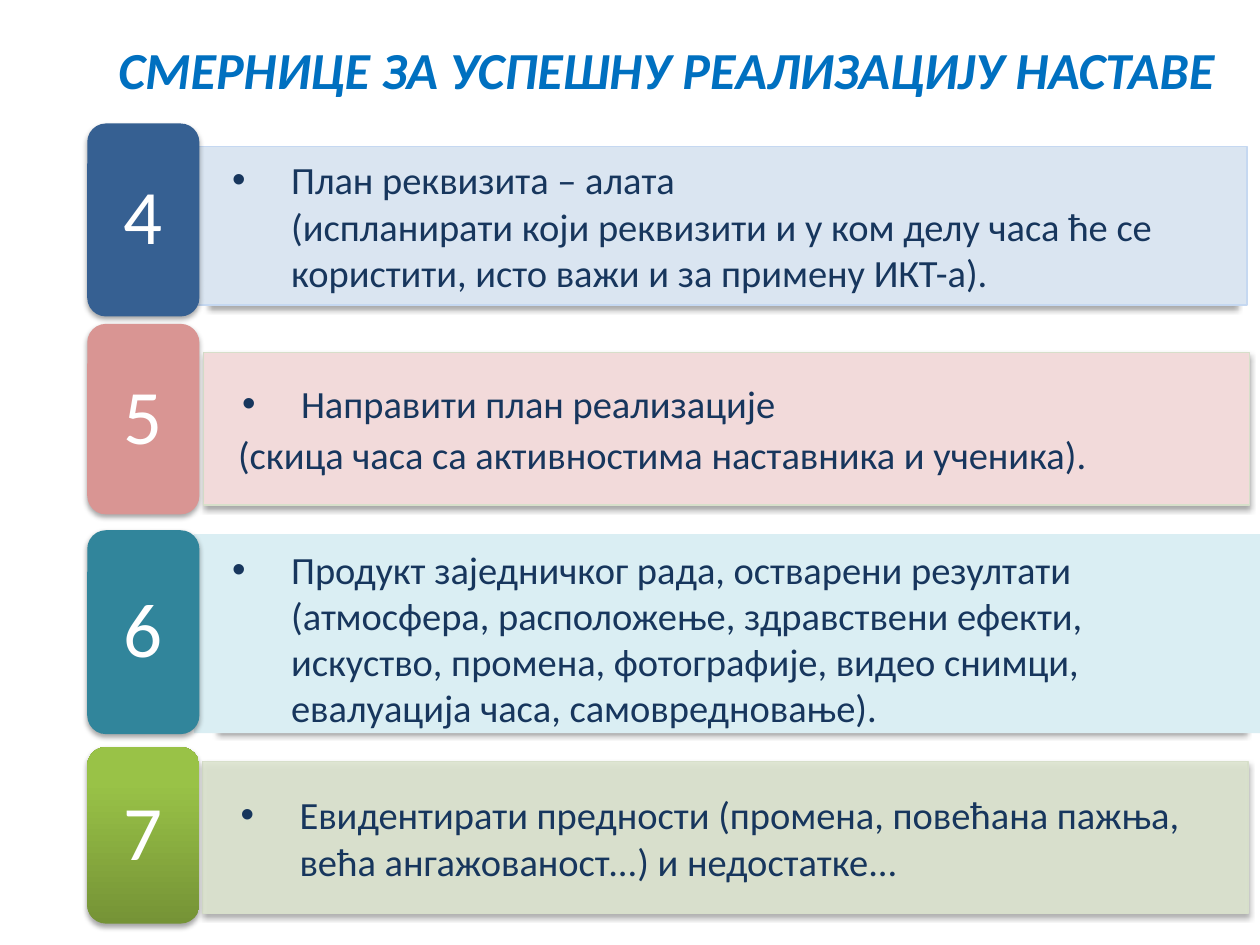
from lxml.etree import SubElement
from pptx import Presentation
from pptx.dml.color import RGBColor
from pptx.enum.shapes import MSO_SHAPE
from pptx.enum.text import MSO_ANCHOR, MSO_AUTO_SIZE, PP_ALIGN
from pptx.oxml.ns import qn
from pptx.util import Cm, Pt

BLUE = RGBColor(0x00, 0x70, 0xC0)
NAVY = RGBColor(0x17, 0x36, 0x5D)
WHITE = RGBColor(0xFF, 0xFF, 0xFF)
SKY = RGBColor(0xDA, 0xE5, 0xF1)
SKY_EDGE = RGBColor(0xC5, 0xD8, 0xF1)
ROSE = RGBColor(0xF2, 0xDA, 0xDA)
AQUA = RGBColor(0xDA, 0xEE, 0xF3)
SAGE = RGBColor(0xDD, 0xE5, 0xD0)
SAGE_EDGE = RGBColor(0xD7, 0xDF, 0xCA)
COBALT = RGBColor(0x36, 0x60, 0x92)
CORAL = RGBColor(0xD9, 0x95, 0x93)
TEAL = RGBColor(0x31, 0x85, 0x9B)
MOSS = RGBColor(0x75, 0x93, 0x36)
LIME = RGBColor(0x99, 0xC2, 0x47)

BADGE_LEFT, BADGE_WIDTH = 1.76, 2.26
PAD = 0.36
# number, top, height, fill colours
BADGES = [
    ("4", 2.49, 3.89, [COBALT]),
    ("5", 6.53, 3.84, [CORAL]),
    ("6", 10.69, 4.11, [TEAL]),
    ("7", 15.06, 3.56, [MOSS, LIME]),
]


class Deck:
    font = "Calibri"

    def __init__(self):
        self.prs = Presentation()
        self.prs.slide_width, self.prs.slide_height = Cm(25.4), Cm(19.05)
        self.slide = self.prs.slides.add_slide(self.prs.slide_layouts[5])

    def style(self, par, size, color):
        for run in par.runs:
            run.font.name = self.font
            run.font.size = Pt(size)
            run.font.color.rgb = color

    def title(self, text, box):
        shape = self.slide.shapes.title
        shape.left, shape.top, shape.width, shape.height = map(Cm, box)
        frame = shape.text_frame
        frame.text = text
        frame.auto_size = MSO_AUTO_SIZE.NONE
        frame.vertical_anchor = MSO_ANCHOR.MIDDLE
        par = frame.paragraphs[0]
        par.alignment = PP_ALIGN.LEFT
        self.style(par, 29.7, BLUE)
        par.runs[0].font.bold = par.runs[0].font.italic = True

    def block(self, kind, box, fills, edge=None, shade=True):
        """Add a filled shape; two fills make a gradient from the bottom up."""
        shape = self.slide.shapes.add_shape(kind, *map(Cm, box))
        if len(fills) == 1:
            shape.fill.solid()
            shape.fill.fore_color.rgb = fills[0]
        else:
            shape.fill.gradient()
            shape.fill.gradient_angle = 90
            for stop, color, place in zip(shape.fill.gradient_stops, fills, (0, 0.8)):
                stop.color.rgb = color
                stop.position = place
        if edge:
            shape.line.color.rgb = edge
            shape.line.width = Pt(0.75)
        else:
            shape.line.fill.background()
        shape.shadow.inherit = False
        if shade:
            self.shade(shape)
        return shape

    def shade(self, shape):
        effects = shape._element.spPr.find(qn("a:effectLst"))
        outer = SubElement(effects, qn("a:outerShdw"), blurRad=str(Pt(3.1)),
                           dist=str(Pt(1.8)), dir="5400000", rotWithShape="0")
        color = SubElement(outer, qn("a:srgbClr"), val="000000")
        SubElement(color, qn("a:alpha"), val="35000")

    def fade(self, shape, percent):
        color = shape._element.spPr.find(qn("a:solidFill"))[0]
        SubElement(color, qn("a:alpha"), val=str(percent * 1000))

    def indent(self, par, left, first=0, bullet=False):
        props = par._p.get_or_add_pPr()
        props.set("marL", str(Cm(left)))
        props.set("indent", str(Cm(first)))
        if bullet:
            SubElement(props, qn("a:buFont"), typeface="Arial")
            SubElement(props, qn("a:buChar"), char="•")

    def panel(self, box, fill, lines, edge=None, shade=True, left=1.27,
              gap=0, pads=(PAD, PAD)):
        """Add a bar whose first line has a bullet; left indents the others."""
        shape = self.block(MSO_SHAPE.RECTANGLE, box, [fill], edge, shade)
        frame = shape.text_frame
        frame.text = "\n".join(lines)
        frame.word_wrap = True
        frame.vertical_anchor = MSO_ANCHOR.MIDDLE
        frame.margin_left = frame.margin_right = Cm(0.69)
        frame.margin_top, frame.margin_bottom = map(Cm, pads)
        for i, par in enumerate(frame.paragraphs):
            if i == 0:
                self.indent(par, 1.27, -1.19, bullet=True)
            else:
                self.indent(par, left)
                par.space_before = Pt(gap)
            par.alignment = PP_ALIGN.LEFT
            self.style(par, 22, NAVY)
        return shape

    def badge(self, text, top, height, fills):
        box = BADGE_LEFT, top, BADGE_WIDTH, height
        shape = self.block(MSO_SHAPE.ROUNDED_RECTANGLE, box, fills)
        frame = shape.text_frame
        frame.text = text
        frame.vertical_anchor = MSO_ANCHOR.MIDDLE
        par = frame.paragraphs[0]
        par.alignment = PP_ALIGN.CENTER
        par.line_spacing = 0.9
        self.style(par, 44, WHITE)


def main():
    deck = Deck()
    deck.title("СМЕРНИЦЕ ЗА УСПЕШНУ РЕАЛИЗАЦИЈУ НАСТАВЕ", (2.13, 0.51, 23.01, 1.75))

    deck.block(MSO_SHAPE.RECTANGLE, (4.2, 3.09, 20.73, 3.07), [SKY], SKY_EDGE)
    deck.panel((3.91, 2.95, 21.23, 3.2), SKY, [
        "План реквизита – алата",
        "(испланирати који реквизити и у ком делу часа ће се користити, "
        "исто важи и за примену ИКТ-а).",
    ], SKY_EDGE, shade=False, pads=(0.1, 0.1))

    deck.panel((4.11, 7.11, 21.08, 3.07), ROSE, [
        "Направити план реализације",
        "(скица часа са активностима наставника и ученика).",
    ], SAGE_EDGE, left=0, gap=3)

    deck.block(MSO_SHAPE.RECTANGLE, (4.38, 11.67, 20.73, 3.07), [AQUA], SAGE_EDGE)
    deck.panel((3.91, 10.77, 21.49, 4.01), AQUA, [
        "Продукт заједничког рада, остварени резултати (атмосфера, "
        "расположење, здравствени ефекти, искуство, промена, фотографије, "
        "видео снимци, евалуација часа, самовредновање).",
    ], shade=False, pads=(0.18, 0))

    last = deck.panel((4.08, 15.35, 21.08, 3.07), SAGE, [
        "Евидентирати предности (промена, повећана пажња, "
        "већа ангажованост...) и недостатке...",
    ], SAGE_EDGE)
    deck.fade(last, 90)

    for badge in BADGES:
        deck.badge(*badge)
    deck.prs.save("out.pptx")


if __name__ == "__main__":
    main()
